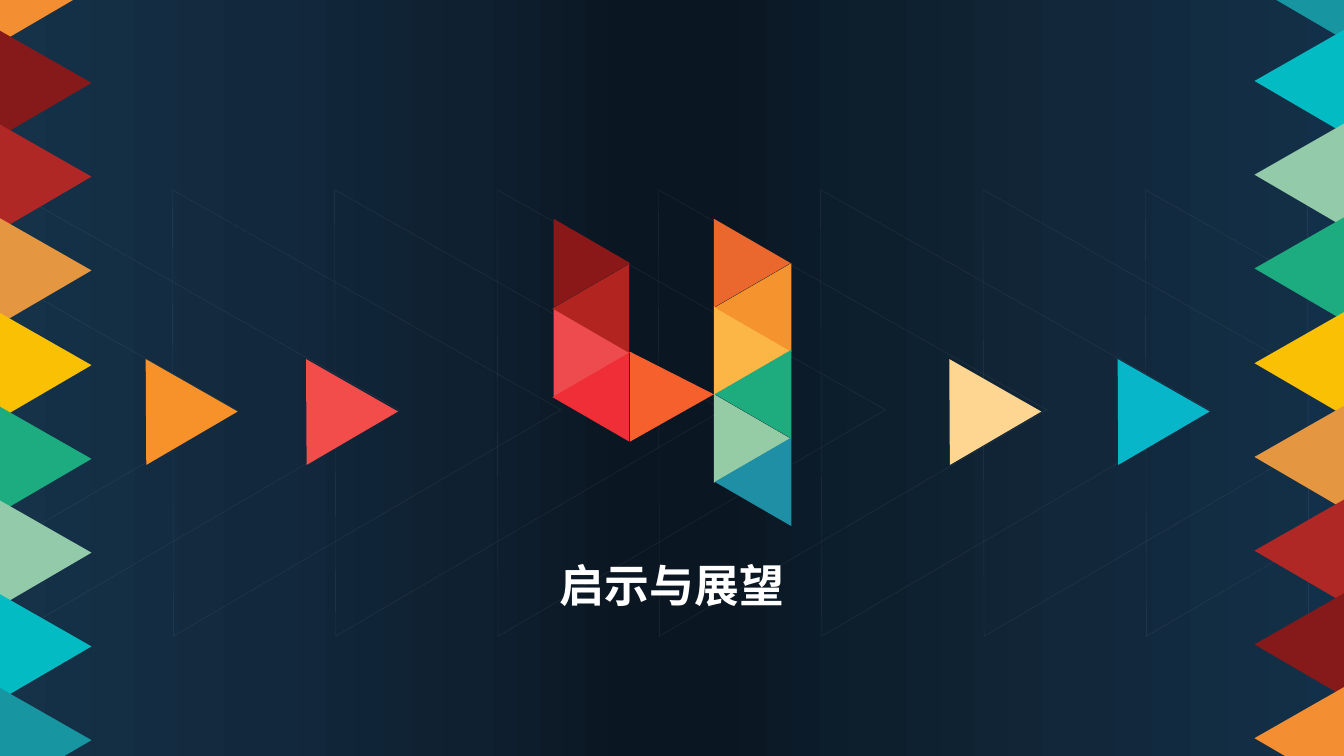
from copy import deepcopy

from lxml import etree
from pptx import Presentation
from pptx.dml.color import RGBColor
from pptx.enum.shapes import MSO_SHAPE
from pptx.enum.text import MSO_AUTO_SIZE, PP_ALIGN
from pptx.oxml.ns import qn
from pptx.util import Pt

EMU_PER_PX = 9144
TRIANGLE = MSO_SHAPE.ISOSCELES_TRIANGLE
CENTER = PP_ALIGN.CENTER
FIT_TEXT = MSO_AUTO_SIZE.SHAPE_TO_FIT_TEXT
FONT = "Noto Sans CJK SC"

SLIDE_WIDTH, SLIDE_HEIGHT = 1333, 750
POINT_RIGHT, POINT_LEFT = 329.7, 30.3
SMALL = (105, 91)
LARGE = (445, 383)
TILE = (88, 76)

BACKGROUND_STOPS = [
    (0, "123049"), (20, "12273A"), (35, "0D1F2D"), (47, "0A1622"), (50, "0A1622"),
    (53, "0A1622"), (65, "0F2030"), (80, "12283D"), (100, "153249"),
]
EDGE_COLORS = ["F38E32", "861A1A", "AF2825", "E59640", "FAC004",
               "1CAC80", "93CAA9", "03BBC2", "1796A1"]
ARROWS = [(115, "F79129"), (274, "F24D4B"), (912, "FED692"), (1079, "08B6CA")]
# Tiles of the numeral, relative to its box: left, top, rotation, color
NUMERAL_TILES = [
    (1, 0, 90, "8A1819"), (1, 89, 90, "EE4B4E"),
    (160, 0, 90, "EA682E"), (160, 87, 90, "FCB646"), (160, 174, 90, "96CCA5"),
    (161, 44, 270, "F5932F"), (161, 130, 270, "1EAC7F"), (161, 217, 270, "1E8FA4"),
    (0, 45, 270, "B12420"), (0, 133, 270, "EF2E37"),
]


def px(length):
    return round(length * EMU_PER_PX)


def rgb(color):
    return RGBColor.from_string(color)


def spread(first, last, count):
    """Return evenly spaced positions from first to last."""
    return [round(first + (last - first) * i / (count - 1)) for i in range(count)]


def add_triangle(shapes, left, top, size, rotation, color=None):
    shape = shapes.add_shape(TRIANGLE, px(left), px(top), *map(px, size))
    shape.rotation = rotation
    shape.shadow.inherit = False
    if color:
        shape.fill.solid()
        shape.fill.fore_color.rgb = rgb(color)
        shape.line.fill.background()
    else:
        shape.fill.background()
    return shape


def paint_background(slide):
    fill = slide.background.fill
    fill.gradient()
    fill.gradient_angle = 180
    stop_list = next(slide.element.iter(qn("a:gsLst")))
    template = deepcopy(stop_list[0])
    for stop in list(stop_list):
        stop_list.remove(stop)
    for position, color in BACKGROUND_STOPS:
        stop = deepcopy(template)
        stop.set("pos", str(position * 1000))
        for child in list(stop):
            stop.remove(child)
        etree.SubElement(stop, qn("a:srgbClr"), val=color)
        stop_list.append(stop)


def add_ghost_row(shapes, left, top, last_left, count):
    """Add the faint outlined triangles behind the title."""
    for position in spread(left, last_left, count):
        shape = add_triangle(shapes, position, top, LARGE, POINT_RIGHT)
        shape.line.color.rgb = rgb("A6A6A6")
        shape.line.width = Pt(0.25)
        color = next(shape.line.fill.fore_color.rgb and
                     shape.element.spPr.iter(qn("a:srgbClr")))
        etree.SubElement(color, qn("a:alpha"), val="15000")


def add_edge(shapes, left, top, height, rotation, colors):
    tops = spread(top, top + height, len(colors))
    for position, color in zip(tops, colors):
        add_triangle(shapes, left, position, SMALL, rotation, color)


def add_arrows(shapes, top):
    for left, color in ARROWS:
        add_triangle(shapes, left, top, SMALL, POINT_RIGHT, color)


def add_numeral(shapes, left, top):
    group = shapes.add_group_shape()
    for x, y, rotation, color in NUMERAL_TILES:
        add_triangle(group.shapes, left + x, top + y, TILE, rotation, color)
    bridge = add_triangle(group.shapes, left + 80, top + 129, (89, 83), 90, "F6602D")
    bridge.adjustments[0] = 0.474


def add_title(shapes, left, top, width, height, text):
    box = shapes.add_textbox(px(left), px(top), px(width), px(height))
    frame = box.text_frame
    frame.word_wrap = True
    frame.auto_size = FIT_TEXT
    paragraph = frame.paragraphs[0]
    paragraph.alignment = CENTER
    run = paragraph.add_run()
    run.text = text
    run.font.name = FONT
    run.font.size = Pt(32)
    run.font.bold = True
    run.font.color.rgb = rgb("FFFFFF")
    properties = run.font.fill and next(run._r.iter(qn("a:rPr")))
    etree.SubElement(properties, qn("a:ea"), typeface=FONT)


def build_section_slide(presentation):
    slide = presentation.slides.add_slide(presentation.slide_layouts[6])
    shapes = slide.shapes
    paint_background(slide)
    add_ghost_row(shapes, -277, 162, 1171, 10)
    add_edge(shapes, -30, -69, 745, POINT_RIGHT, EDGE_COLORS)
    add_edge(shapes, 1260, -71, 745, POINT_LEFT, EDGE_COLORS[::-1])
    add_arrows(shapes, 350)
    add_numeral(shapes, 542, 223)
    add_title(shapes, 334, 548, 665, 67, "启示与展望")


def main():
    presentation = Presentation()
    presentation.slide_width = px(SLIDE_WIDTH)
    presentation.slide_height = px(SLIDE_HEIGHT)
    build_section_slide(presentation)
    presentation.save("out.pptx")


if __name__ == "__main__":
    main()
